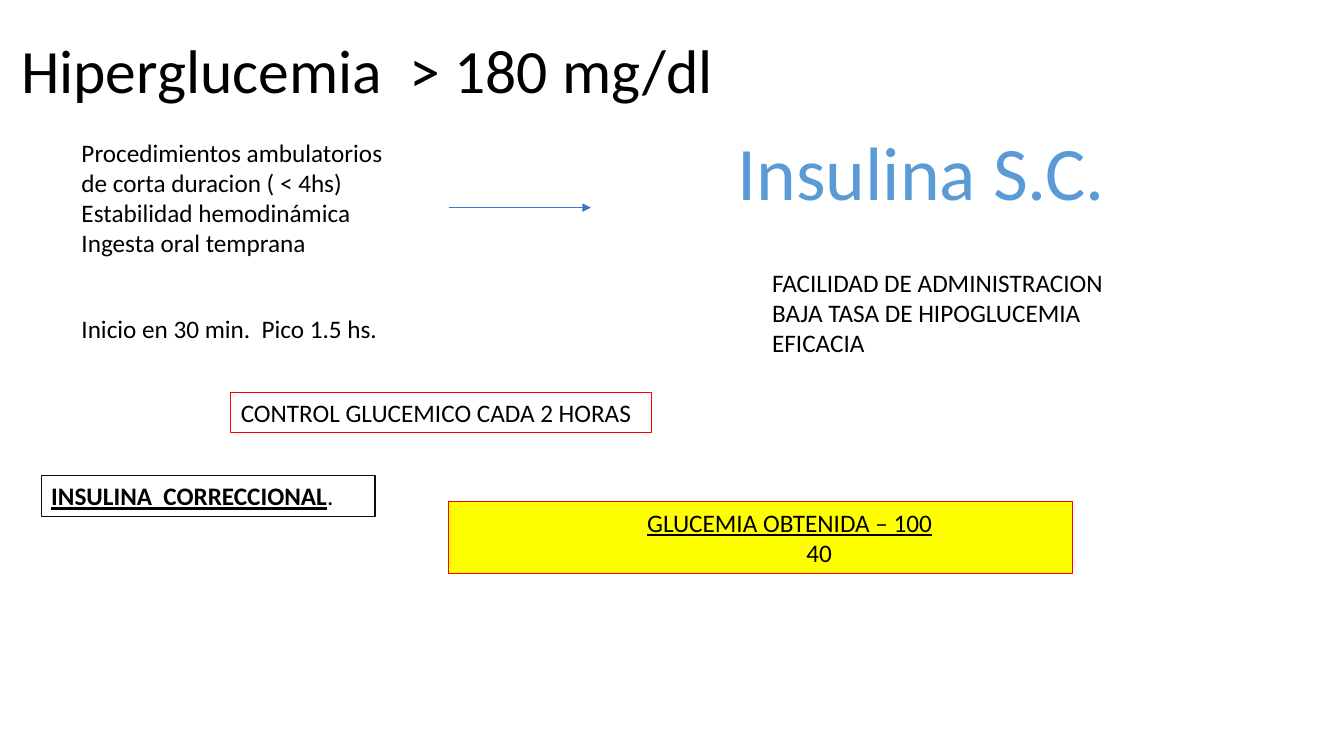
from lxml import etree
from pptx import Presentation
from pptx.dml.color import RGBColor
from pptx.enum import shapes, text
from pptx.oxml import ns
from pptx.util import Inches, Pt

BLACK = RGBColor(0, 0, 0)
INK = RGBColor(0x0D, 0x0D, 0x0D)
RED = RGBColor(0xFF, 0, 0)
YELLOW = RGBColor(0xFF, 0xFF, 0)
SKY = RGBColor(0x5B, 0x9B, 0xD5)
BLUE = RGBColor(0x44, 0x72, 0xC4)
FONT = "Calibri"

TITLE = "Hiperglucemia  > 180 mg/dl"
NOTES = [
    ((0.71, 1.31, 3.28, 1.31), [
        "Procedimientos ambulatorios",
        "de corta duracion ( < 4hs)",
        "Estabilidad hemodinámica",
        "Ingesta oral temprana",
    ]),
    ((0.71, 3.06, 3.17, 0.4), ["Inicio en 30 min.  Pico 1.5 hs."]),
    ((7.56, 2.6, 3.57, 1.01), [
        "FACILIDAD DE ADMINISTRACION",
        "BAJA TASA DE HIPOGLUCEMIA",
        "EFICACIA",
    ]),
]
DRUG = ((7.2, 1.19, 3.88, 1.01), ["Insulina S.C."])
CHECK = ((2.29, 3.89, 4.17, 0.4), ["CONTROL GLUCEMICO CADA 2 HORAS"])
DOSE = ((0.41, 4.72, 3.31, 0.4), ["INSULINA  CORRECCIONAL"])
RATIO = ((4.45, 4.98, 6.19, 0.71), ["GLUCEMIA OBTENIDA – 100", "40"])
INDENTS = [1.87, 3.45]
ARROW = (4.45, 2.06, 5.86, 2.06)


def style(run, size=18, color=BLACK):
    run.font.name = FONT
    run.font.size = Pt(size)
    run.font.color.rgb = color


def add_text(slide, item, size=18, color=BLACK, edge=None):
    place, lines = item
    box = slide.shapes.add_textbox(*map(Inches, place))
    frame = box.text_frame
    frame.word_wrap = True
    frame.text = "\n".join(lines)
    for para in frame.paragraphs:
        style(para.runs[0], size, color)
    if edge is not None:
        box.line.color.rgb = edge
        box.line.width = Pt(0.75)
    return box


def add_arrow(slide):
    arrow = slide.shapes.add_connector(
        shapes.MSO_CONNECTOR.STRAIGHT, *map(Inches, ARROW))
    arrow.line.color.rgb = BLUE
    arrow.line.width = Pt(0.5)
    line = arrow.line._get_or_add_ln()
    etree.SubElement(line, ns.qn("a:tailEnd"), type="triangle")
    etree.SubElement(arrow._element.spPr, ns.qn("a:effectLst"))


def main():
    deck = Presentation()
    deck.slide_width, deck.slide_height = Inches(13.33), Inches(7.5)
    slide = deck.slides.add_slide(deck.slide_layouts[5])

    title = slide.shapes.title
    title.left, title.top = Inches(0.11), Inches(0)
    title.width, title.height = Inches(11.5), Inches(1.45)
    title.text_frame.text = TITLE
    title.text_frame.vertical_anchor = text.MSO_ANCHOR.MIDDLE
    head = title.text_frame.paragraphs[0]
    head.alignment = text.PP_ALIGN.LEFT
    head.line_spacing = 0.9
    style(head.runs[0], 44)

    for note in NOTES:
        add_text(slide, note)
    add_arrow(slide)
    drug = add_text(slide, DRUG, 54, SKY)
    drug.text_frame.paragraphs[0].alignment = text.PP_ALIGN.CENTER
    add_text(slide, CHECK, edge=RED)

    dose = add_text(slide, DOSE, edge=INK).text_frame.paragraphs[0]
    dose.runs[0].font.bold = True
    dose.runs[0].font.underline = True
    stop = dose.add_run()
    stop.text = "."
    style(stop)

    ratio = add_text(slide, RATIO, edge=RED)
    ratio.fill.solid()
    ratio.fill.fore_color.rgb = YELLOW
    paras = ratio.text_frame.paragraphs
    paras[0].runs[0].font.underline = True
    for para, indent in zip(paras, INDENTS):
        para._p.get_or_add_pPr().set("marL", str(Inches(indent)))

    deck.save("out.pptx")


if __name__ == "__main__":
    main()
